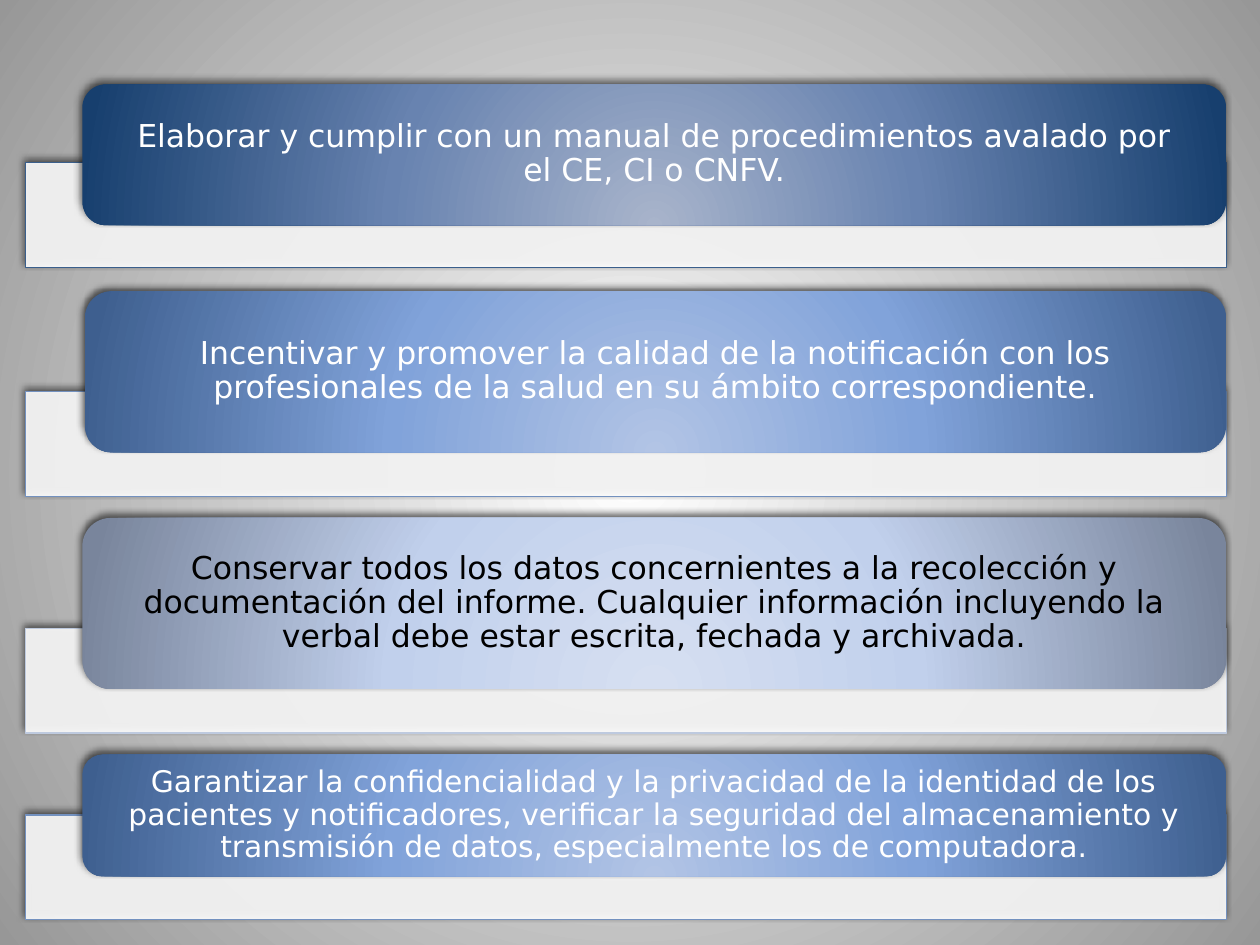
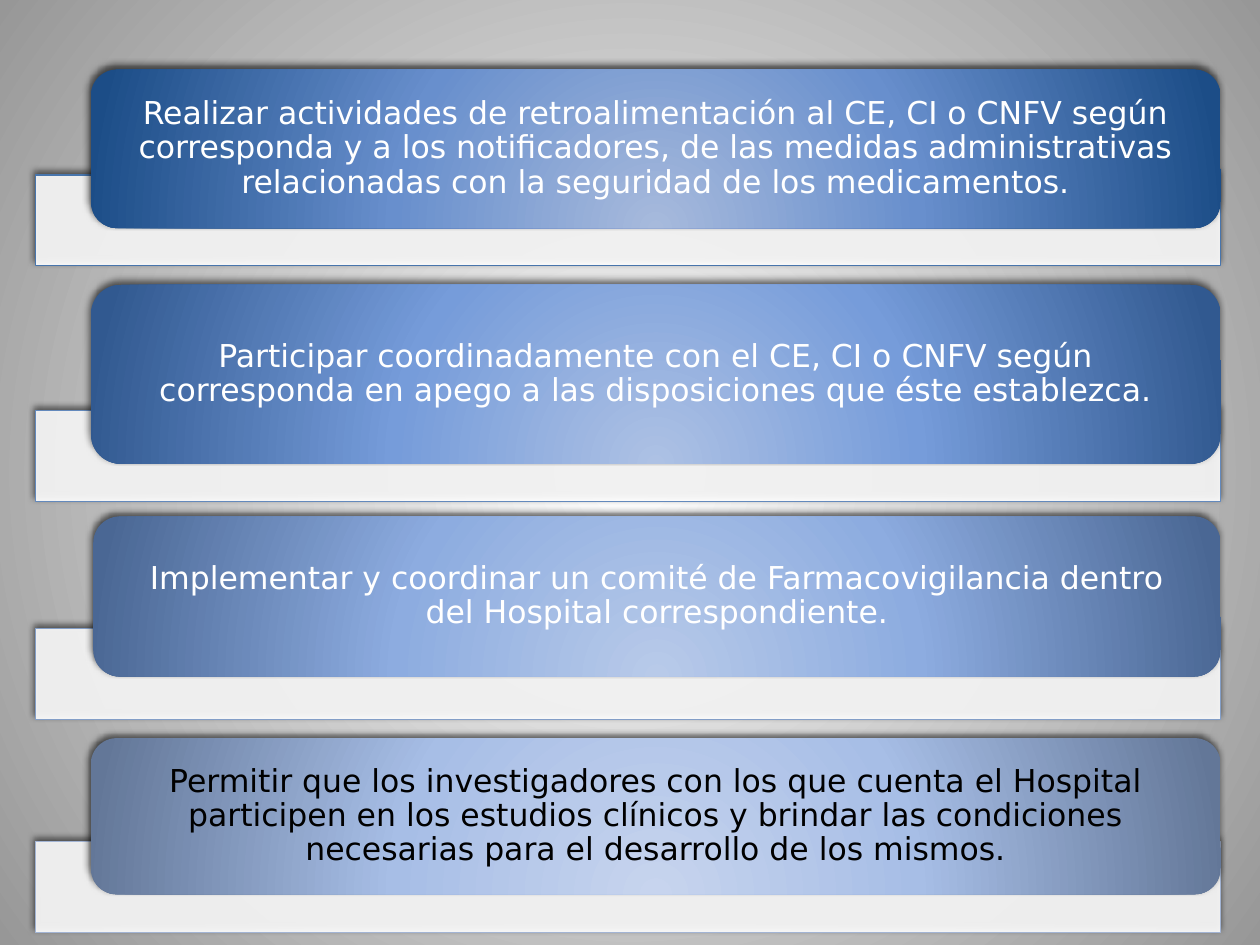
from dataclasses import dataclass

import pptx
import pptx.dml.color
import pptx.enum.shapes
import pptx.enum.text
import pptx.oxml
import pptx.oxml.ns
import pptx.util

Cm = pptx.util.Cm
RGB = pptx.dml.color.RGBColor.from_string
qn = pptx.oxml.ns.qn
A_NS = pptx.oxml.ns.nsdecls("a")


@dataclass(frozen=True)
class Theme:
    font: str = "DejaVu Sans"
    body_size: float = 18
    small_size: float = 17
    light: str = "FFFFFF"
    dark: str = "000000"
    backdrop: tuple = ((0, "FFFFFF"), (100, "979797"))
    backdrop_focus: tuple = (50, 50, 50, 50)
    card_focus: tuple = (50, 155, 50, -55)
    bar_opacity: int = 90
    # Card gradients (centre, middle, edge)
    navy: tuple = ("A8B4CB", "6883B0", "173F6E")
    blue: tuple = ("B2C4E5", "81A3DA", "3E5F8F")
    pale: tuple = ("D6DFF1", "C1D0EC", "79859C")
    deep: tuple = ("A7BADC", "688FCD", "1C4D87")
    royal: tuple = ("ADC1E4", "769CDA", "315990")
    sky: tuple = ("B8CAE9", "8DACE0", "4A6794")
    mist: tuple = ("C7D4EE", "A7BEE6", "637798")


theme = Theme()


def apply_radial_fill(fill, owner, stops, focus):
    """Give a fill a circular gradient; owner is the element that holds it."""
    fill.gradient()
    gradient = next(owner.iter(qn("a:gradFill")))
    stop_xml = "".join(
        f'<a:gs pos="{pos * 1000}"><a:srgbClr val="{colour}"/></a:gs>' for pos, colour in stops
    )
    left, top, right, bottom = (side * 1000 for side in focus)
    radial = pptx.oxml.parse_xml(
        f'<a:gradFill {A_NS} rotWithShape="1"><a:gsLst>{stop_xml}</a:gsLst>'
        f'<a:path path="circle"><a:fillToRect l="{left}" t="{top}" r="{right}" b="{bottom}"/>'
        f"</a:path></a:gradFill>"
    )
    gradient.getparent().replace(gradient, radial)


def add_raised_shape(slide, kind, left, top, width, height):
    """Add a shape with the soft shadow that bars and cards share."""
    shape = slide.shapes.add_shape(kind, Cm(left), Cm(top), Cm(width), Cm(height))
    shape.shadow.inherit = False
    next(shape.element.iter(qn("a:effectLst"))).append(pptx.oxml.parse_xml(
        f'<a:outerShdw {A_NS} blurRad="50800" dist="38100" dir="14700000" rotWithShape="0">'
        f'<a:srgbClr val="{theme.dark}"><a:alpha val="60000"/></a:srgbClr></a:outerShdw>'
    ))
    return shape


# Content: bar geometry per slide, then for each duty
# bar top, card left, card top, card height, gradient, bar outline, text colour, size, text
duty_slides = [
    ((0.51, 24.21, 2.11), [
        (3.28, 1.66, 1.7, 2.84, theme.navy, "3A5F8C", theme.light, theme.body_size,
         "Elaborar y cumplir con un manual de procedimientos avalado por el CE, CI o CNFV."),
        (7.9, 1.71, 5.87, 3.25, theme.blue, "7391BF", theme.light, theme.body_size,
         "Incentivar y promover la calidad de la notificación con los profesionales de la "
         "salud en su ámbito correspondiente."),
        (12.67, 1.66, 10.44, 3.45, theme.pale, "BECADF", theme.dark, theme.body_size,
         "Conservar todos los datos concernientes a la recolección y documentación del informe. "
         "Cualquier información incluyendo la verbal debe estar escrita, fechada y archivada."),
        (16.43, 1.66, 15.21, 2.46, theme.blue, "7391BF", theme.light, theme.small_size,
         "Garantizar la confidencialidad y la privacidad de la identidad de los pacientes y "
         "notificadores, verificar la seguridad del almacenamiento y transmisión de datos, "
         "especialmente los de computadora."),
    ]),
    ((0.71, 23.9, 1.83), [
        (3.53, 1.83, 1.4, 3.2, theme.deep, "4875AC", theme.light, theme.body_size,
         "Realizar actividades de retroalimentación al CE, CI o CNFV según corresponda y a los "
         "notificadores, de las medidas administrativas relacionadas con la seguridad de los "
         "medicamentos."),
        (8.28, 1.83, 5.74, 3.61, theme.royal, "6389BC", theme.light, theme.body_size,
         "Participar coordinadamente con el CE, CI o CNFV según corresponda en apego a las "
         "disposiciones que éste establezca."),
        (12.67, 1.88, 10.41, 3.23, theme.sky, "839EC7", theme.light, theme.body_size,
         "Implementar y coordinar un comité de Farmacovigilancia dentro del Hospital "
         "correspondiente."),
        (16.97, 1.83, 14.88, 3.15, theme.mist, "A2B4D4", theme.dark, theme.body_size,
         "Permitir que los investigadores con los que cuenta el Hospital participen en los "
         "estudios clínicos y brindar las condiciones necesarias para el desarrollo de los "
         "mismos."),
    ]),
]

deck = pptx.Presentation()
deck.slide_width, deck.slide_height = Cm(25.4), Cm(19.05)

for (bar_left, bar_width, bar_height), duties in duty_slides:
    slide = deck.slides.add_slide(deck.slide_layouts[6])
    apply_radial_fill(slide.background.fill, slide.element, theme.backdrop, theme.backdrop_focus)

    for (bar_top, card_left, card_top, card_height,
         gradient, outline, text_colour, size, wording) in duties:
        # Translucent bar behind the card
        bar = add_raised_shape(slide, pptx.enum.shapes.MSO_SHAPE.RECTANGLE,
                               bar_left, bar_top, bar_width, bar_height)
        bar.fill.solid()
        bar.fill.fore_color.rgb = RGB(theme.light)
        bar_colour = next(bar.element.spPr.iter(qn("a:srgbClr")))
        bar_colour.append(pptx.oxml.parse_xml(
            f'<a:alpha {A_NS} val="{theme.bar_opacity * 1000}"/>'))
        bar.line.color.rgb = RGB(outline)
        bar.line.width = pptx.util.Pt(0.75)

        # Card, flush with the right end of its bar
        card = add_raised_shape(slide, pptx.enum.shapes.MSO_SHAPE.ROUNDED_RECTANGLE,
                                card_left, card_top, bar_left + bar_width - card_left, card_height)
        apply_radial_fill(card.fill, card.element, tuple(zip((0, 46, 100), gradient)),
                          theme.card_focus)
        card.line.fill.background()

        # Duty wording
        frame = card.text_frame
        frame.text = wording
        frame.word_wrap = True
        frame.vertical_anchor = pptx.enum.text.MSO_ANCHOR.MIDDLE
        frame.margin_left = frame.margin_right = Cm(0.64)
        frame.margin_top = frame.margin_bottom = 0
        duty = frame.paragraphs[0]
        duty.alignment = pptx.enum.text.PP_ALIGN.CENTER
        duty.line_spacing = 0.9
        font = duty.runs[0].font
        font.name = theme.font
        font.size = pptx.util.Pt(size)
        font.color.rgb = RGB(text_colour)

deck.save("out.pptx")
